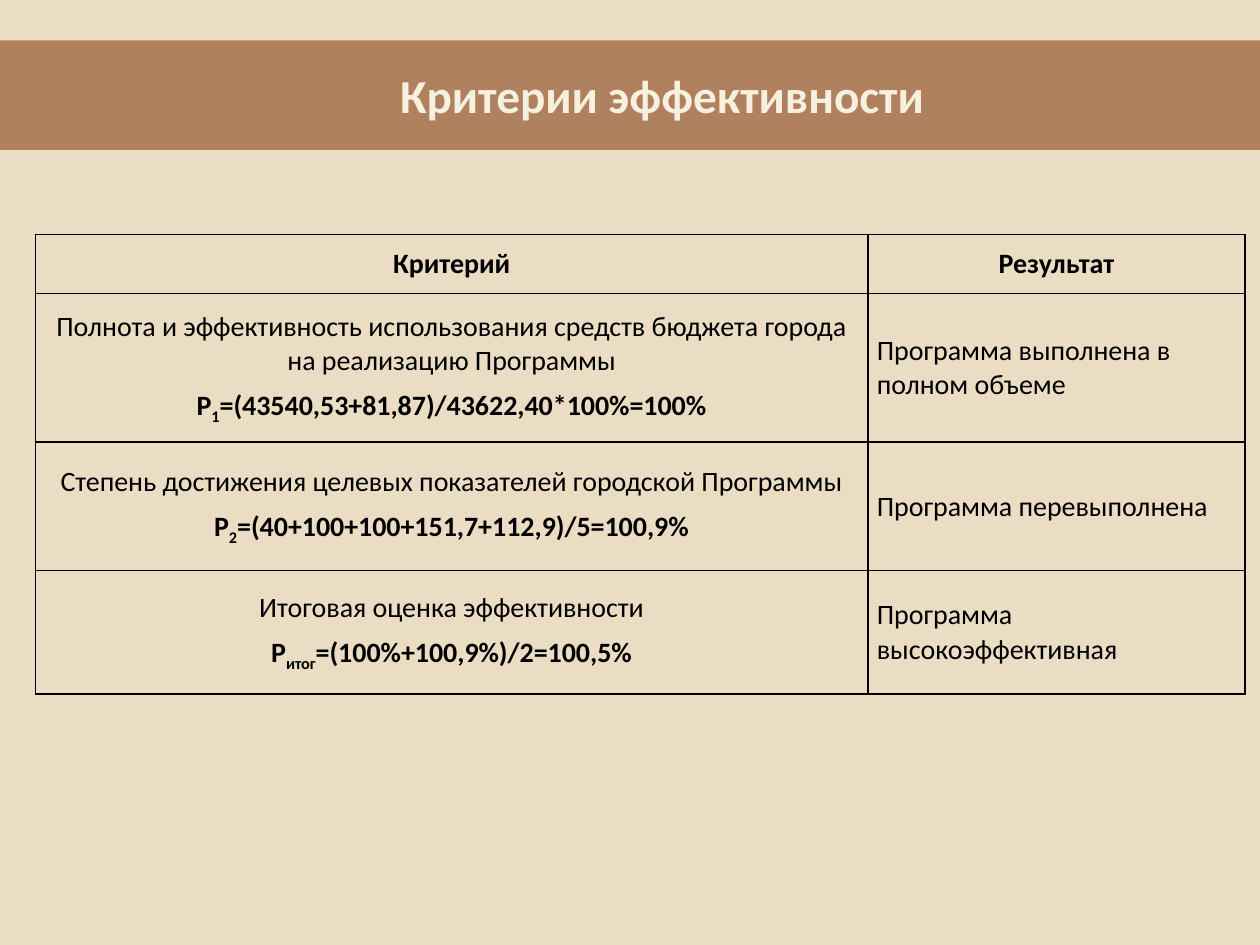
"""Build the slide with the programme effectiveness criteria table."""
import pptx
import pptx.util
import pptx.dml.color
import pptx.enum.shapes
import pptx.enum.text
import pptx.oxml
import pptx.oxml.ns

Inches, Pt = pptx.util.Inches, pptx.util.Pt
RGB = pptx.dml.color.RGBColor.from_string
PP_ALIGN = pptx.enum.text.PP_ALIGN
MIDDLE = pptx.enum.text.MSO_ANCHOR.MIDDLE
COLORS = {"background": "EBDDC3", "band": "AF815F", "title": "F7F0DE", "text": "000000"}
CRITERIA = [
    ("Полнота и эффективность использования средств бюджета города на реализацию Программы",
     "1", "=(43540,53+81,87)/43622,40*100%=100%", "Программа выполнена в полном объеме"),
    ("Степень достижения целевых показателей городской Программы",
     "2", "=(40+100+100+151,7+112,9)/5=100,9%", "Программа перевыполнена"),
    ("Итоговая оценка эффективности",
     "итог", "=(100%+100,9%)/2=100,5%", "Программа высокоэффективная"),
]


def format_paragraph(p, size, color, bold, align):
    p.alignment = align
    p.font.name = "Calibri"
    p.font.size = Pt(size)
    p.font.bold = bold
    p.font.color.rgb = RGB(COLORS[color])


def format_cell(cell):
    cell.vertical_anchor = MIDDLE
    cell.margin_left = cell.margin_right = Inches(0.07)
    cell.margin_top = cell.margin_bottom = 0
    tcPr = cell._tc.get_or_add_tcPr()
    for side in ("lnL", "lnR", "lnT", "lnB"):
        tcPr.append(pptx.oxml.parse_xml(
            f'<a:{side} {pptx.oxml.ns.nsdecls("a")} w="12700"><a:solidFill>'
            f'<a:srgbClr val="{COLORS["text"]}"/></a:solidFill></a:{side}>'))
    cell.fill.background()


prs = pptx.Presentation()
prs.slide_width, prs.slide_height = Inches(10), Inches(7.5)
s = prs.slides.add_slide(prs.slide_layouts[5])
s.background.fill.solid()
s.background.fill.fore_color.rgb = RGB(COLORS["background"])

band = s.shapes.add_shape(pptx.enum.shapes.MSO_SHAPE.RECTANGLE,
                          0, Inches(0.32), Inches(10.04), Inches(0.87))
band.shadow.inherit = False
band.fill.solid()
band.fill.fore_color.rgb = RGB(COLORS["band"])
band.line.fill.background()

title = s.shapes.title
title._element.addprevious(band._element)
title.left, title.top = Inches(2.93), Inches(0.47)
title.width, title.height = Inches(4.65), Inches(0.56)
tf = title.text_frame
tf.text = "Критерии эффективности"
tf.word_wrap = False
tf.auto_size = pptx.enum.text.MSO_AUTO_SIZE.NONE
tf.vertical_anchor = MIDDLE
format_paragraph(tf.paragraphs[0], 27, "title", True, PP_ALIGN.CENTER)

table = s.shapes.add_table(4, 2, Inches(0.28), Inches(1.86), Inches(9.6), Inches(3.65)).table
table.first_row = table.horz_banding = False
for column, width in zip(table.columns, (6.61, 2.99)):
    column.width = Inches(width)
for row, height in zip(table.rows, (0.47, 1.18, 1.02, 0.98)):
    row.height = Inches(height)
for cell in table.iter_cells():
    format_cell(cell)

for col, heading in enumerate(("Критерий", "Результат")):
    p = table.cell(0, col).text_frame.paragraphs[0]
    p.text = heading
    format_paragraph(p, 16, "text", True, PP_ALIGN.CENTER)

for row, (criterion, index, formula, result) in enumerate(CRITERIA, 1):
    tf = table.cell(row, 0).text_frame
    p = tf.paragraphs[0]
    p.text = criterion
    p.space_after = Pt(6)
    format_paragraph(p, 16, "text", False, PP_ALIGN.CENTER)

    p = tf.add_paragraph()
    for text in ("P", index, formula):
        r = p.add_run()
        r.text = text
        if text == index:
            r._r.get_or_add_rPr().set("baseline", "-25000")
    format_paragraph(p, 16, "text", True, PP_ALIGN.CENTER)

    p = table.cell(row, 1).text_frame.paragraphs[0]
    p.text = result
    format_paragraph(p, 16, "text", False, PP_ALIGN.LEFT)

prs.save("out.pptx")
